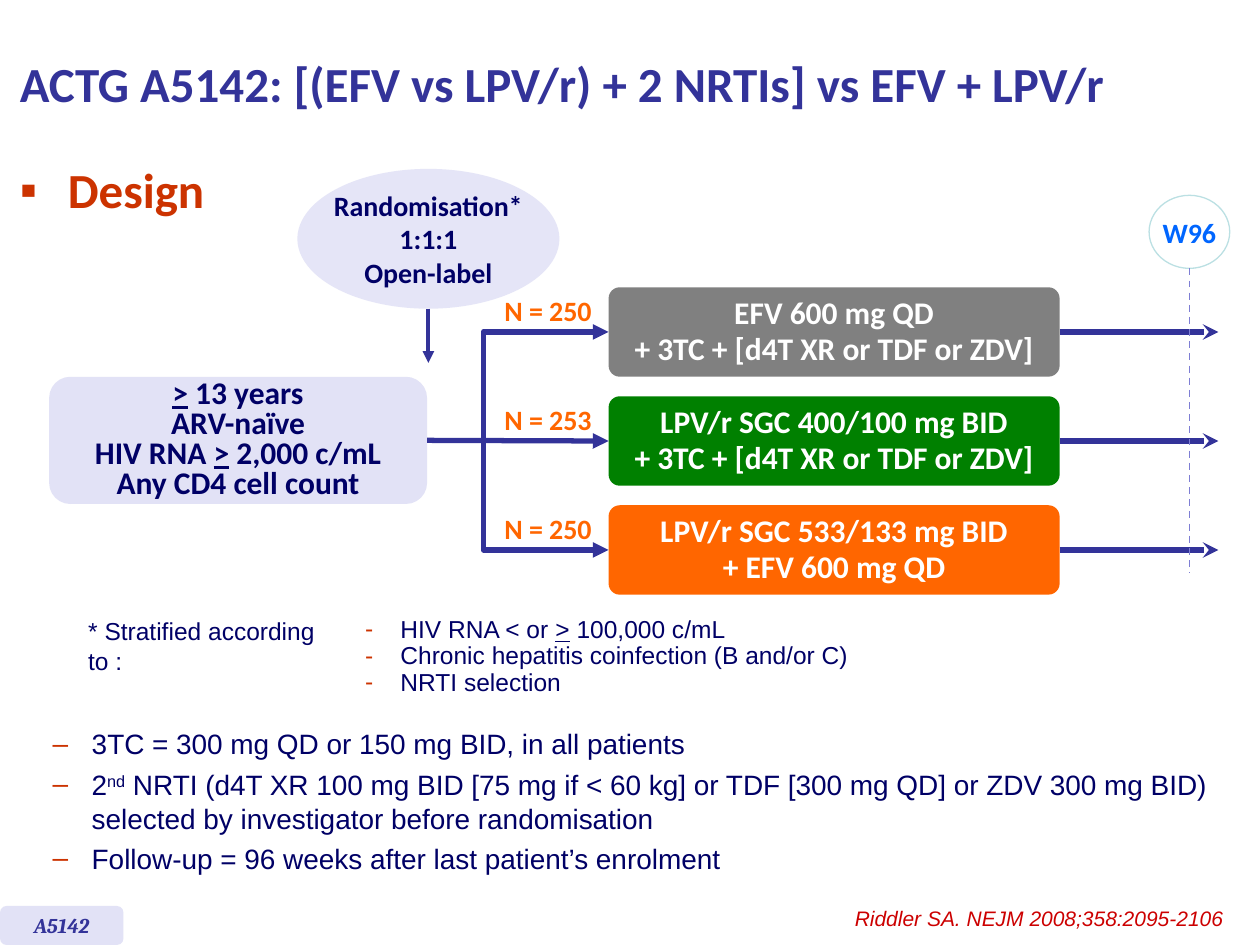
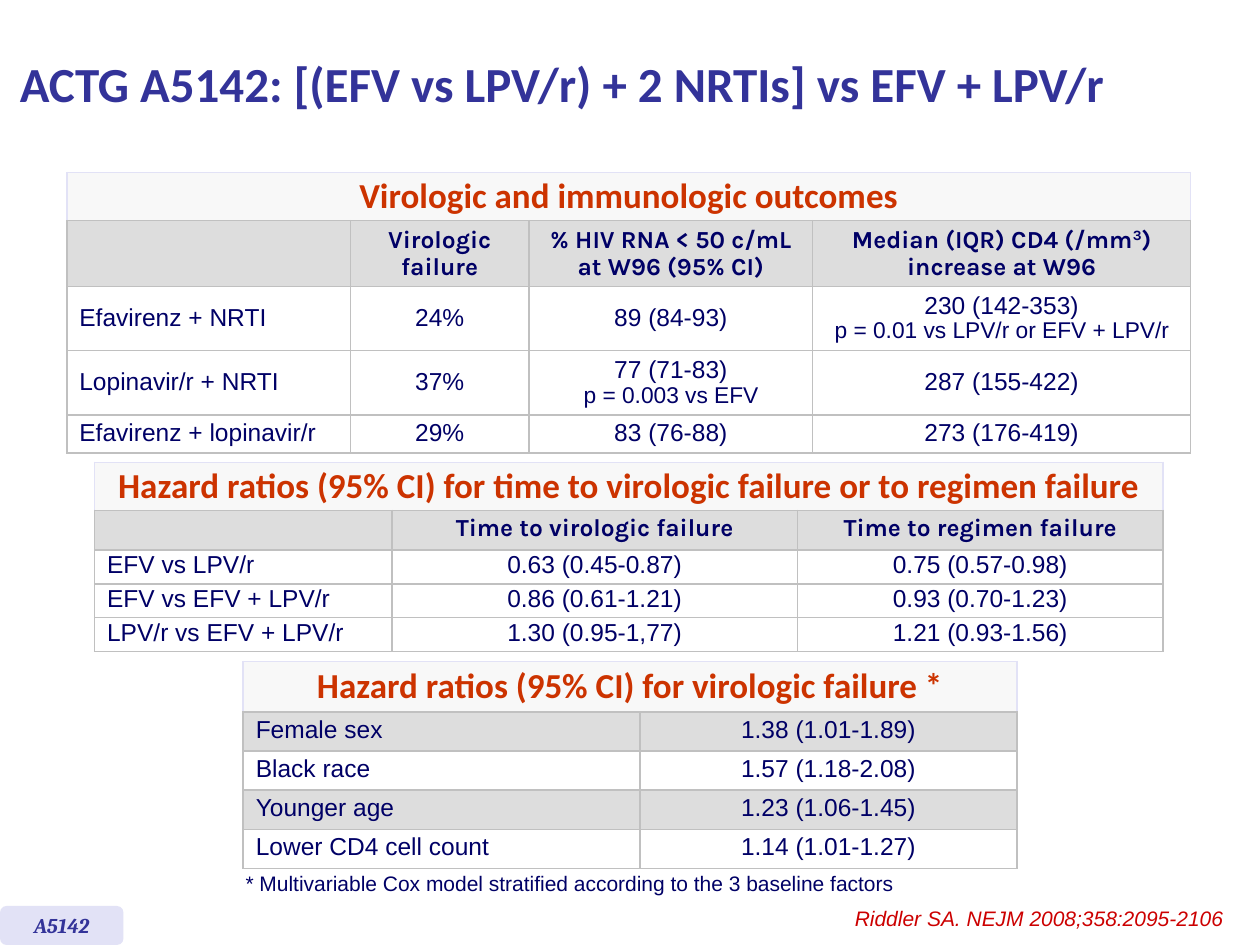
from dataclasses import dataclass, replace
from typing import Optional, Union

from lxml.etree import SubElement
from pptx import Presentation
from pptx.dml.color import RGBColor
from pptx.enum.dml import MSO_LINE
from pptx.enum.shapes import MSO_CONNECTOR as Link, MSO_SHAPE as Form
from pptx.enum.text import MSO_ANCHOR as Anchor, PP_ALIGN as Align
from pptx.oxml.ns import qn
from pptx.util import Emu, Inches, Pt

COLOURS = {
    "navy": "000066", "indigo": "333399", "lavender": "E2E2F6", "mist": "E5E5F7",
    "rust": "CC3300", "citation": "CC0000", "orange": "FF6600", "green": "008000",
    "grey": "808080", "white": "FFFFFF", "blue": "0066FF", "aqua": "BBE0E3",
    "violet": "7E7ED4", "rule": "C0C0C0", "header": "DDDDDD", "caption": "F8F8F8",
}
WIDTH, HEIGHT = Inches(10), Inches(7.5)
COLUMNS, ROWS = 100, 75
TOP, LEFT, BOTTOM, RIGHT = range(4)
TITLE = "ACTG A5142: [(EFV vs LPV/r) + 2 NRTIs] vs EFV + LPV/r"


@dataclass(frozen=True)
class Look:
    font: str
    size: float
    colour: str
    bold: bool = False
    italic: bool = False


@dataclass(frozen=True)
class Flow:
    """How paragraphs run; indents are in grid columns, gap in points."""
    align: Align = Align.LEFT
    leading: float = 1.0
    bullet: str = ""
    margin: float = 0
    hanging: float = 0
    gap: float = 0


@dataclass(frozen=True)
class Span:
    text: str
    underline: bool = False
    raised: bool = False
    size: Optional[float] = None


@dataclass(frozen=True)
class Area:
    left: float
    top: float
    width: float
    height: float

    def emu(self) -> tuple:
        return across(self.left), down(self.top), across(self.width), down(self.height)


@dataclass(frozen=True)
class Arm:
    patients: int
    colour: str
    regimen: tuple


@dataclass(frozen=True)
class Grid:
    left: float
    top: float
    widths: tuple
    heights: tuple
    caption: str
    rows: tuple
    leading: float
    has_header: bool = True
    striped: bool = False
    anchor: Anchor = Anchor.MIDDLE
    padding: float = 0.4


Line = Union[str, Span, tuple]
CENTRE = Flow(Align.CENTER)
HEADING = Look("Calibri", 28, "indigo", bold=True)
BODY = Look("Arial", 14, "navy")
LABEL = Look("Calibri", 16, "navy", bold=True)
BOX = replace(LABEL, size=18)
TABLE_CAPTION = Look("Calibri", 20, "rust", bold=True)
TABLE_HEADER = Look("Karla", 14, "navy", bold=True)
AT_LEAST = Span(">", underline=True)


def across(columns: float) -> Emu:
    return Emu(round(columns * WIDTH / COLUMNS))


def down(rows: float) -> Emu:
    return Emu(round(rows * HEIGHT / ROWS))


def rgb(name: str) -> RGBColor:
    return RGBColor.from_string(COLOURS[name])


def add_bullet(para, flow: Flow) -> None:
    props = para._p.get_or_add_pPr()
    props.set("marL", str(across(flow.margin)))
    props.set("indent", str(-across(flow.hanging)))
    SubElement(SubElement(props, qn("a:buClr")), qn("a:srgbClr"), val=COLOURS["rust"])
    SubElement(props, qn("a:buFont"), typeface="Arial")
    SubElement(props, qn("a:buChar"), char=flow.bullet)


def write(frame, lines: tuple, look: Look, flow: Flow) -> None:
    """Write one paragraph per line, run by run."""
    for index, line in enumerate(lines):
        para = frame.add_paragraph() if index else frame.paragraphs[0]
        if flow.bullet:
            add_bullet(para, flow)
        para.alignment = flow.align
        para.line_spacing = flow.leading
        para.space_before = Pt(flow.gap if index else 0)
        for part in line if isinstance(line, tuple) else (line,):
            span = part if isinstance(part, Span) else Span(part)
            run = para.add_run()
            run.text = span.text
            font = run.font
            font.name, font.size = look.font, Pt(span.size or look.size)
            font.bold, font.italic = look.bold, look.italic
            font.underline = span.underline
            font.color.rgb = rgb(look.colour)
            if span.raised:
                run._r.get_or_add_rPr().set("baseline", "30000")


def add_text(page, area: Area, lines: tuple, look: Look, flow: Flow = Flow(),
             anchor: Anchor = Anchor.TOP, wrap: bool = True, inset: bool = True):
    box = page.shapes.add_textbox(*area.emu())
    frame = box.text_frame
    frame.word_wrap, frame.vertical_anchor = wrap, anchor
    if not inset:
        frame.margin_left = frame.margin_right = frame.margin_top = frame.margin_bottom = 0
    write(frame, lines, look, flow)
    return box


def add_box(page, form: Form, area: Area, fill: str, lines: tuple, look: Look,
            leading: float = 1.0, corner: Optional[float] = None, outline: str = ""):
    box = page.shapes.add_shape(form, *area.emu())
    box.shadow.inherit = False
    box.fill.solid()
    box.fill.fore_color.rgb = rgb(fill)
    if outline:
        box.line.color.rgb, box.line.width = rgb(outline), Pt(0.75)
    else:
        box.line.fill.background()
    if corner is not None:
        box.adjustments[0] = corner
    frame = box.text_frame
    frame.word_wrap, frame.vertical_anchor = False, Anchor.MIDDLE
    write(frame, lines, look, replace(CENTRE, leading=leading))
    return box


def add_link(page, start, side: int, end: tuple = (0, 0), target=None, colour: str = "indigo",
             weight: float = 3, head: str = "triangle", bend: Optional[float] = None):
    """Connect a side of start to the left of target, or to a grid point."""
    kind = Link.STRAIGHT if bend is None else Link.ELBOW
    link = page.shapes.add_connector(kind, 0, 0, across(end[0]), down(end[1]))
    link.begin_connect(start, side)
    if target is not None:
        link.end_connect(target, LEFT)
    link.line.color.rgb, link.line.width = rgb(colour), Pt(weight)
    props = link._element.spPr
    if bend is not None:
        geometry = props.find(qn("a:prstGeom"))
        guides = geometry.find(qn("a:avLst"))
        if guides is None:
            guides = SubElement(geometry, qn("a:avLst"))
        SubElement(guides, qn("a:gd"), name="adj1", fmla=f"val {round(bend * 100000)}")
    if head:
        SubElement(props.find(qn("a:ln")), qn("a:tailEnd"), type=head)
    SubElement(props, qn("a:effectLst"))
    return link


def style_cell(cell, fill: str, edge: str, grid: Grid) -> None:
    props = cell._tc.get_or_add_tcPr()
    for side, colour in (("L", edge), ("R", edge), ("T", edge), ("B", "rule")):
        border = SubElement(props, qn(f"a:ln{side}"), w=str(Pt(1)))
        paint = SubElement(border, qn("a:solidFill"))
        SubElement(paint, qn("a:srgbClr"), val=COLOURS[colour])
    if fill:
        cell.fill.solid()
        cell.fill.fore_color.rgb = rgb(fill)
    else:
        cell.fill.background()
    cell.vertical_anchor = grid.anchor
    cell.margin_left = cell.margin_right = across(1)
    cell.margin_top = cell.margin_bottom = down(grid.padding)


def add_grid(page, grid: Grid) -> None:
    blanks = ("",) * (len(grid.widths) - 1)
    content = ((grid.caption, *blanks), *grid.rows)
    area = Area(grid.left, grid.top, sum(grid.widths), sum(grid.heights))
    table = page.shapes.add_table(len(content), len(grid.widths), *area.emu()).table
    table.first_row = table.horz_banding = False
    for column, width in zip(table.columns, grid.widths):
        column.width = across(width)
    for row, height in zip(table.rows, grid.heights):
        row.height = down(height)
    for r, texts in enumerate(content):
        is_header = grid.has_header and r == 1
        shaded = is_header or (grid.striped and r % 2 == 1)
        fill = "caption" if r == 0 else "header" if shaded else ""
        look = TABLE_CAPTION if r == 0 else TABLE_HEADER if is_header else BODY
        for c, text in enumerate(texts):
            cell = table.cell(r, c)
            style_cell(cell, fill, "rule" if r else "lavender", grid)
            if not text:
                para = cell.text_frame.paragraphs[0]
                SubElement(para._p, qn("a:endParaRPr"), sz="1400")
                continue
            align = Align.LEFT if r and c == 0 else Align.CENTER
            lines = text if isinstance(text, list) else [text]
            write(cell.text_frame, lines, look, Flow(align, grid.leading if r else 0.9))
    table.cell(0, 0).merge(table.cell(0, len(grid.widths) - 1))


def add_page(deck):
    """Add a blank slide with the shared title, study badge and citation."""
    page = deck.slides.add_slide(deck.slide_layouts[6])
    add_text(page, Area(0.6, 0.5, 89.6, 12.1), (TITLE,), HEADING, anchor=Anchor.MIDDLE)
    add_box(page, Form.ROUNDED_RECTANGLE, Area(0, 71.9, 9.8, 3.1), "lavender", ("A5142",),
            Look("Cambria", 12, "indigo", bold=True, italic=True), corner=0.167)
    add_text(page, Area(64.7, 71.4, 33.4, 3), ("Riddler SA. NEJM 2008;358:2095-2106",),
             Look("Arial", 12, "citation", italic=True), Flow(Align.RIGHT))
    return page


ARMS = (
    Arm(250, "grey", ("EFV 600 mg QD", "+ 3TC + [d4T XR or TDF or ZDV]")),
    Arm(253, "green", ("LPV/r SGC 400/100 mg BID", "+ 3TC + [d4T XR or TDF or ZDV]")),
    Arm(250, "orange", ("LPV/r SGC 533/133 mg BID", "+ EFV 600 mg QD")),
)
STRATA = (("HIV RNA < or ", AT_LEAST, " 100,000 c/mL"),
          "Chronic hepatitis coinfection (B and/or C)", "NRTI selection")
DOSING = (
    "3TC = 300 mg QD or 150 mg BID, in all patients",
    ("2", Span("nd", raised=True), " NRTI (d4T XR 100 mg BID [75 mg if < 60 kg] or TDF [300 mg QD] "
     "or ZDV 300 mg BID) selected by investigator before randomisation"),
    "Follow-up = 96 weeks after last patient’s enrolment",
)
OUTCOMES = Grid(
    5.3, 13.7, (22.5, 14.2, 22.5, 30), (3.8, 5.2, 5.1, 5.1, 3),
    "Virologic and immunologic outcomes", (
        ("", "Virologic failure", "% HIV RNA < 50 c/mL at W96 (95% CI)",
         ("Median (IQR) CD4 (/mm", Span("3", raised=True), ") increase at W96")),
        ("Efavirenz + NRTI", "24%", "89 (84-93)",
         ["230 (142-353)", Span("p = 0.01 vs LPV/r or EFV + LPV/r", size=13)]),
        ("Lopinavir/r + NRTI", "37%",
         ["77 (71-83)", Span("p = 0.003 vs EFV", size=13)], "287 (155-422)"),
        ("Efavirenz + lopinavir/r", "29%", "83 (76-88)", "273 (176-419)"),
    ), leading=0.95)
FAILURE_TIMES = Grid(
    7.5, 36.7, (23.6, 32.2, 29), (3.8, 3, 2.7, 2.7, 2.7),
    "Hazard ratios (95% CI) for time to virologic failure or to regimen failure", (
        ("", "Time to virologic failure", "Time to regimen failure"),
        ("EFV vs LPV/r", "0.63 (0.45-0.87)", "0.75 (0.57-0.98)"),
        ("EFV vs EFV + LPV/r", "0.86 (0.61-1.21)", "0.93 (0.70-1.23)"),
        ("LPV/r vs EFV + LPV/r", "1.30 (0.95-1,77)", "1.21 (0.93-1.56)"),
    ), leading=0.8)
RISK_FACTORS = Grid(
    19.3, 52.5, (31.5, 29.9), (4, 3.1, 3.1, 3.1, 3.1),
    "Hazard ratios (95% CI) for virologic failure *", (
        ("Female sex", "1.38 (1.01-1.89)"), ("Black race", "1.57 (1.18-2.08)"),
        ("Younger age", "1.23 (1.06-1.45)"), ("Lower CD4 cell count", "1.14 (1.01-1.27)"),
    ), leading=0.9, has_header=False, striped=True, anchor=Anchor.TOP, padding=0.5)


def add_design(deck) -> None:
    page = add_page(deck)
    add_text(page, Area(0.6, 12.2, 19.8, 6.3), ("Design",), replace(HEADING, colour="rust"),
             Flow(bullet="▪", margin=3.8, hanging=3.8))
    randomisation = add_box(page, Form.OVAL, Area(23.6, 13.4, 20.8, 11.1), "mist",
                            ("Randomisation*", "1:1:1", "Open-label"), LABEL)
    add_link(page, randomisation, BOTTOM, (34, 28.8), weight=2.25)
    entry = add_box(page, Form.ROUNDED_RECTANGLE, Area(3.9, 29.9, 30, 10.1), "lavender",
                    ((AT_LEAST, " 13 years"), "ARV-naïve", ("HIV RNA ", AT_LEAST, " 2,000 c/mL"),
                     "Any CD4 cell count"), BOX, leading=0.8, corner=0.167)
    for index, arm in enumerate(ARMS):
        top, height = 22.8 + 8.65 * index, 7.1
        box = add_box(page, Form.ROUNDED_RECTANGLE, Area(48.3, top, 35.8, height), arm.colour,
                      arm.regimen, replace(BOX, colour="white"), leading=0.95, corner=0.125)
        add_link(page, entry, RIGHT, target=box, bend=None if index == 1 else 0.31)
        add_link(page, box, RIGHT, (96.7, top + height / 2), head="stealth")
        add_text(page, Area(39, top, 9, 3.7), (f"N = {arm.patients}",),
                 replace(LABEL, colour="orange"), CENTRE, wrap=False)
    week = add_box(page, Form.OVAL, Area(91.2, 15.5, 6.4, 5.8), "white", ("W96",),
                   replace(LABEL, colour="blue"), outline="aqua")
    follow_up = add_link(page, week, BOTTOM, (94.4, 45.5), colour="violet", weight=1, head="")
    follow_up.line.dash_style = MSO_LINE.DASH
    add_text(page, Area(7, 48.9, 21.1, 4.8), ("* Stratified according to :",), BODY, inset=False)
    add_text(page, Area(28, 48.5, 50, 7.3), STRATA, BODY,
             Flow(leading=0.9, bullet="-", margin=2.8, hanging=2.8))
    add_text(page, Area(0, 57.2, 100, 13.4), DOSING, replace(BODY, size=16),
             Flow(bullet="–", margin=6.3, hanging=3.1, gap=4))


def add_results(deck) -> None:
    page = add_page(deck)
    for grid in (OUTCOMES, FAILURE_TIMES, RISK_FACTORS):
        add_grid(page, grid)
    add_text(page, Area(18.5, 68.6, 62.2, 3), replace(BODY, size=12) and
             ("* Multivariable Cox model stratified according to the 3 baseline factors",),
             replace(BODY, size=12))


def main() -> None:
    deck = Presentation()
    deck.slide_width, deck.slide_height = WIDTH, HEIGHT
    add_design(deck)
    add_results(deck)
    deck.save("out.pptx")


if __name__ == "__main__":
    main()
